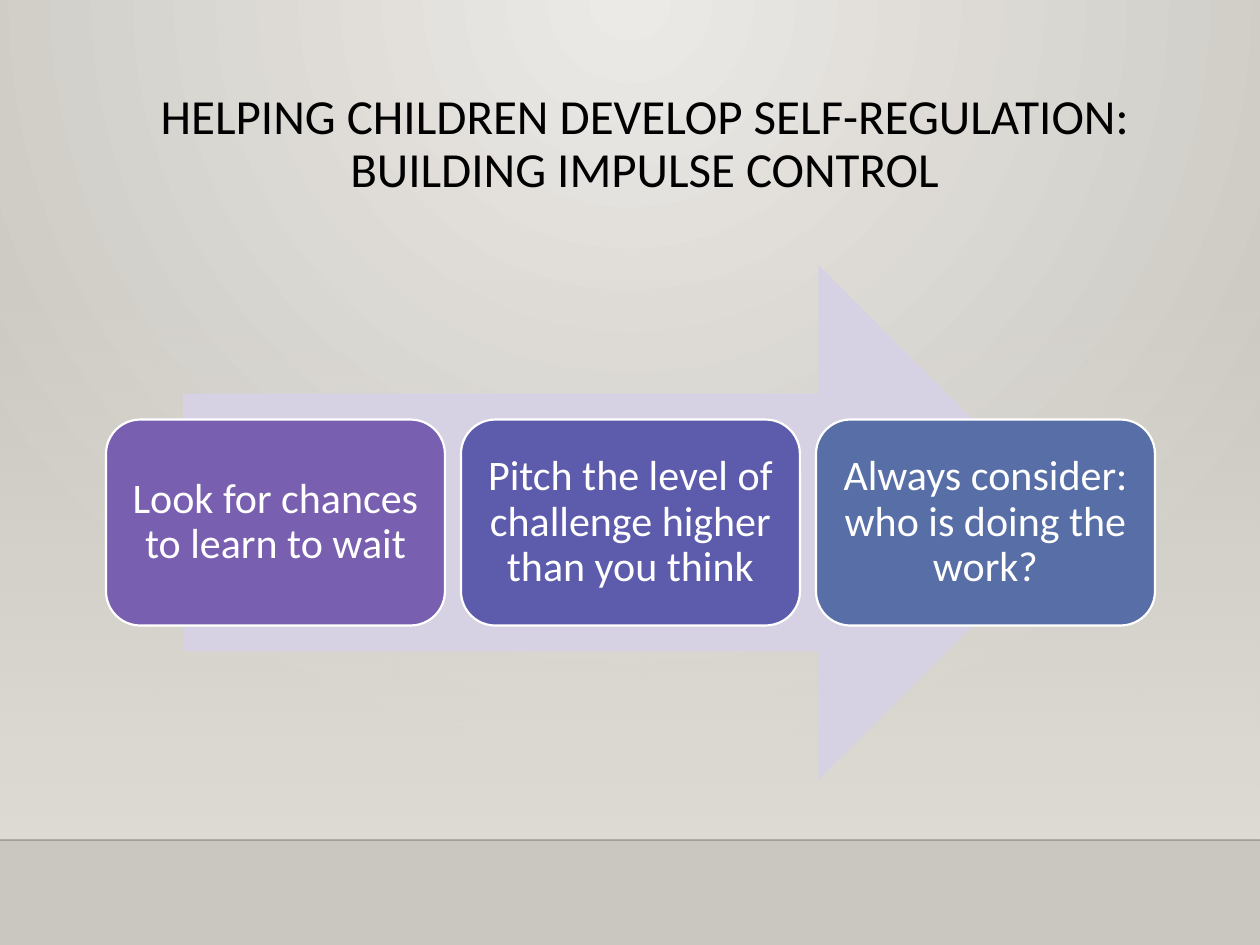
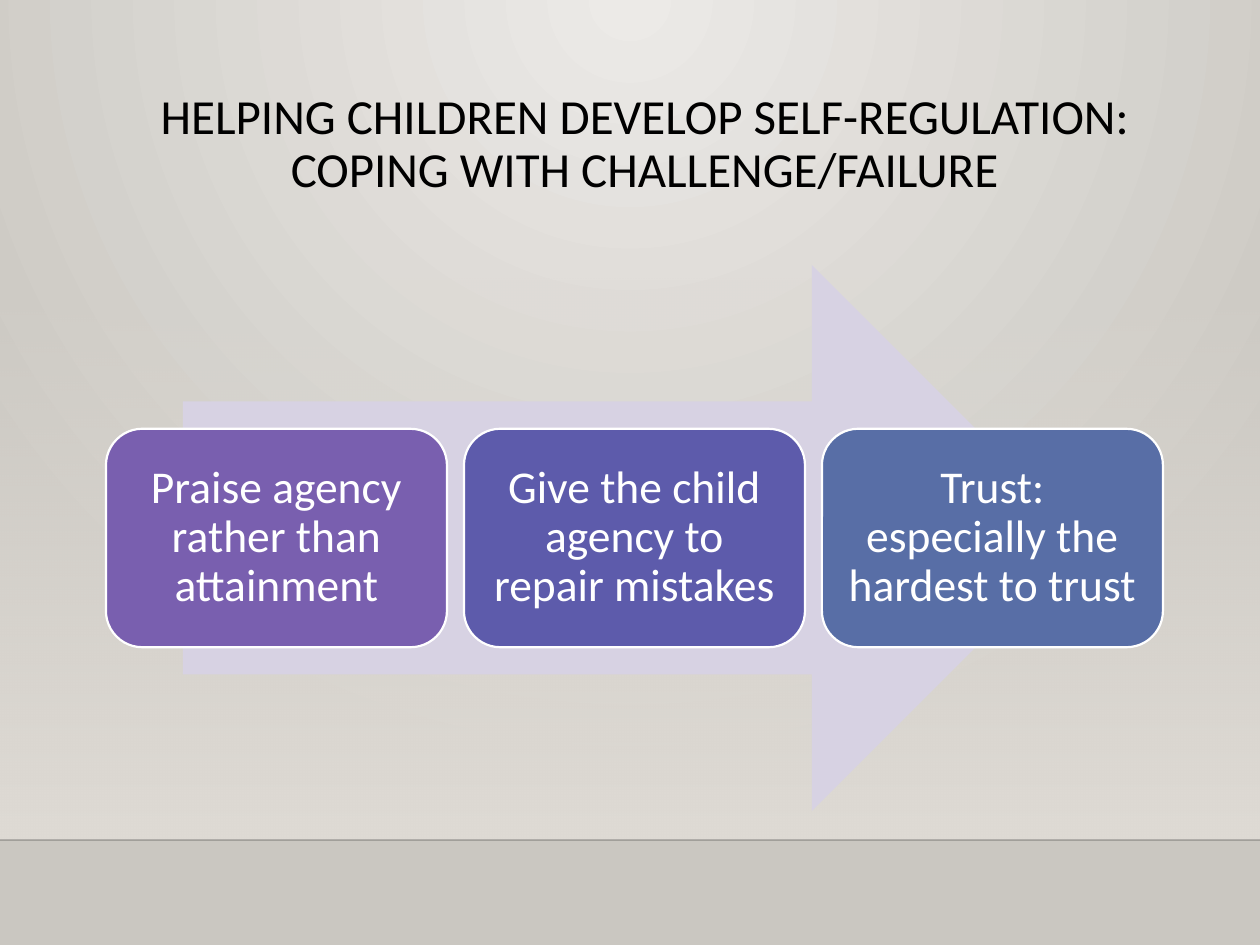
import pptx
import pptx.util
import pptx.dml.color
import pptx.enum.shapes
import pptx.enum.text
import pptx.oxml.ns
from lxml import etree

RGB = pptx.dml.color.RGBColor
KIND = pptx.enum.shapes.MSO_SHAPE
ALIGN = pptx.enum.text.PP_ALIGN
ANCHOR = pptx.enum.text.MSO_ANCHOR
qn = pptx.oxml.ns.qn

# Colours
LIGHT = RGB(0xEC, 0xEA, 0xE7)
STONE = RGB(0xCA, 0xC7, 0xC1)
SAND = RGB(0xDF, 0xDB, 0xD5)
INK = RGB(0x00, 0x00, 0x01)
BLACK = RGB(0x00, 0x00, 0x00)
WHITE = RGB(0xFF, 0xFF, 0xFF)
LILAC = RGB(0xD7, 0xD2, 0xE3)
STEPS = [RGB(0x79, 0x5F, 0xAF), RGB(0x5D, 0x5B, 0xAB), RGB(0x58, 0x6E, 0xA6)]

# Scale and page, in px
SCALE = 914400 / 126
WIDE, HIGH = 1260, 945
BAND_TOP, FLOOR = 278, 840
ARROW_LEFT, ARROW_TOP = 183, 265
BOX_LEFT = 106

TOPIC = "HELPING CHILDREN DEVELOP SELF-REGULATION:"


def px(size):
    return pptx.util.Emu(round(size * SCALE))


class Deck:
    """Holds the shared style and the current slide."""

    def __init__(self):
        self.prs = pptx.Presentation()
        self.prs.slide_width, self.prs.slide_height = px(WIDE), px(HIGH)
        self.slide = None

    def blend(self, fill, first, last):
        fill.gradient()
        for stop, tone, spot in zip(fill.gradient_stops, (first, last), (0, 1)):
            stop.color.rgb = tone
            stop.position = spot

    def fade(self, item, share):
        """Set the opacity of the first colour of an item, in percent."""
        tone = next(item.element.iter(qn("a:srgbClr")))
        etree.SubElement(tone, qn("a:alpha"), val=str(share * 1000))

    def page(self):
        self.slide = self.prs.slides.add_slide(self.prs.slide_layouts[6])
        # Round glow from the top centre
        self.blend(self.slide.background.fill, LIGHT, STONE)
        grad = next(self.slide.element.iter(qn("a:gradFill")))
        grad.remove(grad.find(qn("a:lin")))
        glow = etree.SubElement(grad, qn("a:path"), {"path": "circle"})
        etree.SubElement(glow, qn("a:fillToRect"), l="43000", t="0", r="43000", b="100000")
        # Band that fades in down to the floor line
        band = self.shape(KIND.RECTANGLE, 0, BAND_TOP, WIDE, FLOOR - BAND_TOP)
        self.blend(band.fill, SAND, SAND)
        band.fill.gradient_angle = 270
        self.fade(band, 0)
        self.rule(FLOOR)

    def shape(self, kind, left, top, width, height, tone=None):
        item = self.slide.shapes.add_shape(kind, px(left), px(top), px(width), px(height))
        item.shadow.inherit = False
        item.line.fill.background()
        if tone is not None:
            item.fill.solid()
            item.fill.fore_color.rgb = tone
        return item

    def rule(self, top):
        line = self.slide.shapes.add_connector(
            pptx.enum.shapes.MSO_CONNECTOR.STRAIGHT, 0, px(top), px(WIDE), px(top))
        line.line.width = pptx.util.Pt(1)
        line.line.color.rgb = INK
        self.fade(line, 20)
        etree.SubElement(line.element.spPr, qn("a:effectLst"))

    def label(self, item, text, size, tone, **frame):
        for name, value in {"word_wrap": True, **frame}.items():
            setattr(item.text_frame, name, value)
        para = item.text_frame.paragraphs[0]
        para.text = text
        para.alignment, para.line_spacing = ALIGN.CENTER, 0.9
        for name, value in {"name": "Calibri", "size": pptx.util.Pt(size)}.items():
            setattr(para.font, name, value)
        para.font.color.rgb = tone

    def title(self, text):
        box = self.slide.shapes.add_textbox(px(83), px(86), px(1123), px(157))
        self.label(box, text, 28, BLACK, vertical_anchor=ANCHOR.TOP)

    def arrow(self, width, height):
        self.shape(KIND.RIGHT_ARROW, ARROW_LEFT, ARROW_TOP, width, height, LILAC)

    def box(self, left, top, width, height, tone, text, size, pad):
        item = self.shape(KIND.ROUNDED_RECTANGLE, left, top, width, height, tone)
        item.line.color.rgb = WHITE
        item.line.width = pptx.util.Pt(1.25)
        sides = ("left", "top", "right", "bottom")
        self.label(item, text, size, WHITE, vertical_anchor=ANCHOR.MIDDLE,
                   **{"margin_" + side: px(pad) for side in sides})

    def flow(self, texts, size, pad, width, pitch, reach, tall):
        """Arrow of the given reach and height with a row of boxes across it."""
        self.arrow(reach, tall)
        top, height = ARROW_TOP + 0.3 * tall, 0.4 * tall
        for i, (text, tone) in enumerate(zip(texts, STEPS)):
            self.box(BOX_LEFT + i * pitch, top, width, height, tone, text, size, pad)


def main():
    deck = Deck()

    # Impulse control
    deck.page()
    deck.flow(["Look for chances to learn to wait",
               "Pitch the level of challenge higher than you think",
               "Always consider: who is doing the work?"],
              size=24, pad=13, width=339, pitch=355, reach=893, tall=515)
    deck.title(TOPIC + "\nBUILDING IMPULSE CONTROL")

    # Challenge and failure
    deck.page()
    deck.flow(["Praise agency rather than attainment",
               "Give the child agency to repair mistakes",
               "Trust: especially the hardest to trust"],
              size=26, pad=14, width=341, pitch=358, reach=902, tall=546)
    deck.title(TOPIC + "\nCOPING WITH CHALLENGE/FAILURE")

    deck.prs.save("out.pptx")


if __name__ == "__main__":
    main()
